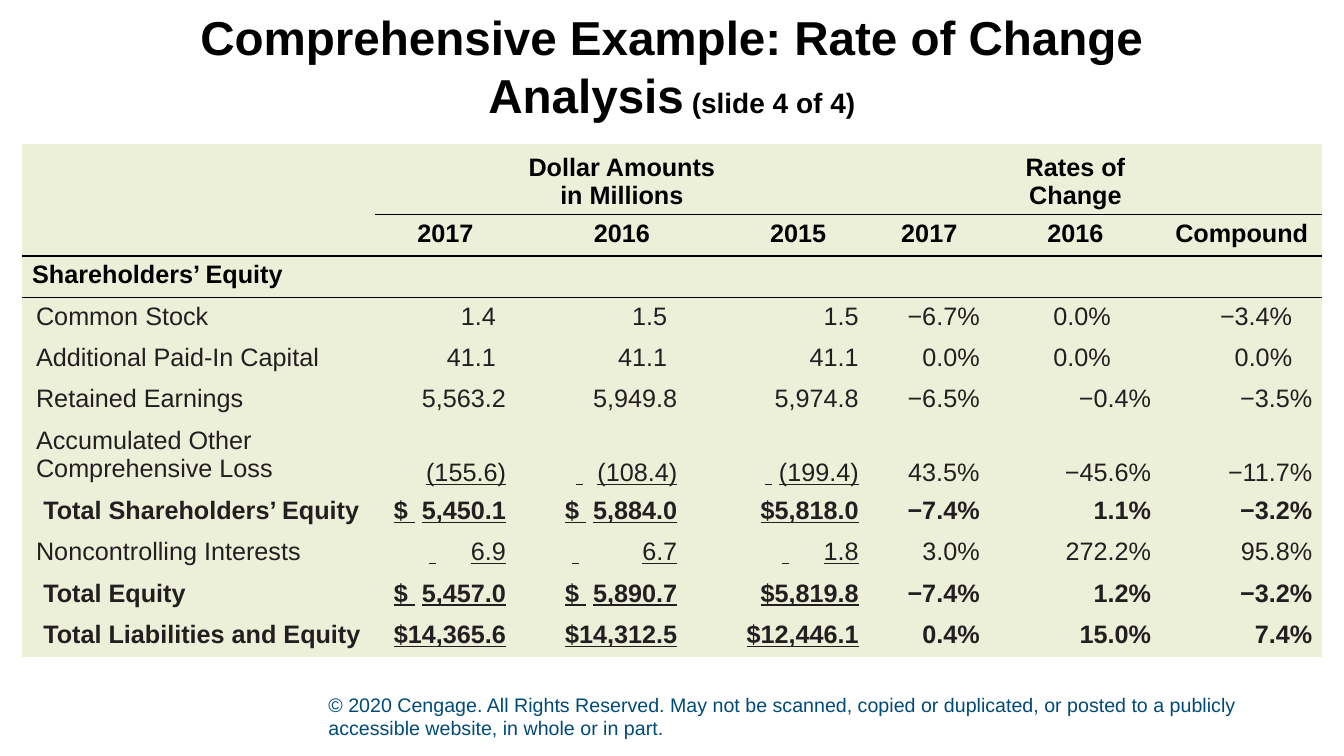
from dataclasses import dataclass

from lxml.etree import SubElement
from pptx import Presentation
from pptx.dml.color import RGBColor
from pptx.enum.text import MSO_ANCHOR as Anchor, PP_ALIGN as Align
from pptx.oxml.ns import qn
from pptx.util import Pt


@dataclass(frozen=True)
class Theme:
    font: str = "Arial"
    black: str = "000000"
    ink: str = "231F20"
    footer_blue: str = "004A78"
    table_fill: str = "EDF0D8"
    title_size: int = 34
    subtitle_size: int = 20
    table_size: int = 18
    footer_size: int = 14


NO_GRID_STYLE = "{2D5ABB26-0587-4C30-8999-92F81FD0307C}"
COLUMN_WIDTHS = [252, 100.8, 151.2, 100.8, 86.4, 122.4, 115.2]
ROW_HEIGHT = 29.5
SPACE_WIDTH = 5  # width of one space at the table type size

GROUP_HEADER = ["", "", "Dollar Amounts in Millions", "", "", "Rates of Change", ""]
YEAR_HEADER = ["", "2017", "2016", "2015", "2017", "2016", "Compound"]
SECTION = ["Shareholders’ Equity"] + [""] * 6

# Right margins of the six figure columns
WIDE_MARGINS = [14.4, 43.2, 7.2, 7.2, 36, 21.6]
PLAIN_MARGINS = [7.2, 36, 7.2, 7.2, 7.2, 7.2]

# Label and figures, right margins, widths in spaces of the underlined gaps
DETAIL_ROWS = [
    (["Common Stock", "1.4", "1.5", "1.5", "−6.7%", "0.0%", "−3.4%"], WIDE_MARGINS, None),
    (["Additional Paid-In Capital", "41.1", "41.1", "41.1", "0.0%", "0.0%", "0.0%"],
     WIDE_MARGINS, None),
    (["Retained Earnings", "5,563.2", "5,949.8", "5,974.8", "−6.5%", "−0.4%", "−3.5%"],
     PLAIN_MARGINS, None),
    (["Accumulated Other Comprehensive Loss", "(155.6)", "(108.4)", "(199.4)",
      "43.5%", "−45.6%", "−11.7%"], PLAIN_MARGINS, (0, 3, 2)),
    (["Total Shareholders’ Equity", "$5,450.1", "$5,884.0", "$5,818.0",
      "−7.4%", "1.1%", "−3.2%"], PLAIN_MARGINS, (2, 2, 0)),
    (["Noncontrolling Interests", "6.9", "6.7", "1.8", "3.0%", "272.2%", "95.8%"],
     PLAIN_MARGINS, (6, 10, 6)),
    (["Total Equity", "$5,457.0", "$5,890.7", "$5,819.8", "−7.4%", "1.2%", "−3.2%"],
     PLAIN_MARGINS, (2, 2, 0)),
    (["Total Liabilities and Equity", "$14,365.6", "$14,312.5", "$12,446.1",
      "0.4%", "15.0%", "7.4%"], PLAIN_MARGINS, (0, 0, 0)),
]


class SlideBuilder:
    def __init__(self, slide, theme):
        self.slide = slide
        self.theme = theme

    def add_run(self, paragraph, text, color, spacing=0, **formats):
        run = paragraph.add_run()
        run.text = text
        for name, value in {"name": self.theme.font, **formats}.items():
            setattr(run.font, name, value)
        run.font.color.rgb = RGBColor.from_string(color)
        if spacing:
            run.font._element.set("spc", str(spacing * 100))

    def add_text(self, left, top, width, height, anchor, align, runs):
        frame = self.slide.shapes.add_textbox(*map(Pt, (left, top, width, height))).text_frame
        frame.word_wrap = True
        frame.vertical_anchor = anchor
        paragraph = frame.paragraphs[0]
        paragraph.alignment = align
        for text, color, formats in runs:
            self.add_run(paragraph, text, color, **formats)

    def add_table(self, left, top, row_count):
        frame = self.slide.shapes.add_table(
            row_count, len(COLUMN_WIDTHS), Pt(left), Pt(top),
            Pt(sum(COLUMN_WIDTHS)), Pt(row_count * ROW_HEIGHT))
        table = frame.table
        table._tbl.tblPr.find(qn("a:tableStyleId")).text = NO_GRID_STYLE
        table.first_row = table.horz_banding = False
        for column, width in zip(table.columns, COLUMN_WIDTHS):
            column.width = Pt(width)
        for row in table.rows:
            row.height = Pt(ROW_HEIGHT)
        return table

    def add_border(self, cell, side):
        line = SubElement(cell._tc.get_or_add_tcPr(), qn(f"a:ln{side}"), w=str(Pt(1)))
        fill = SubElement(line, qn("a:solidFill"))
        SubElement(fill, qn("a:srgbClr"), val=self.theme.black)

    def fill_cell(self, cell, text, color, align, anchor=Anchor.TOP, margins=(7.2, 7.2),
                  borders="", gap=0, **formats):
        """Write one cell; gap is an underlined blank, in spaces, before the digits."""
        for side in borders:
            self.add_border(cell, side)
        cell.fill.solid()
        cell.fill.fore_color.rgb = RGBColor.from_string(self.theme.table_fill)
        cell.vertical_anchor = anchor
        cell.margin_left, cell.margin_right = map(Pt, margins)
        if not text:
            return
        paragraph = cell.text_frame.paragraphs[0]
        paragraph.alignment = align
        formats["size"] = Pt(self.theme.table_size)
        if gap:
            if text.startswith("$"):
                self.add_run(paragraph, "$", color, **formats)
                text = text[1:]
            self.add_run(paragraph, " ", color, (gap - 1) * SPACE_WIDTH, **formats)
        self.add_run(paragraph, text, color, **formats)

    def fill_header(self, table):
        for column, (group, year, section) in enumerate(
                zip(GROUP_HEADER, YEAR_HEADER, SECTION)):
            heading_borders = ("B", "TB") if column else ("", "B")
            rows = [
                (group, Align.CENTER, Anchor.BOTTOM, heading_borders[0]),
                (year, Align.CENTER, Anchor.TOP, heading_borders[1]),
                (section, Align.LEFT, Anchor.TOP, "T"),
            ]
            for row, (text, align, anchor, borders) in enumerate(rows):
                self.fill_cell(table.cell(row, column), text, self.theme.black, align,
                               anchor, borders=borders, bold=True)

    def fill_details(self, table, first_row):
        ink = self.theme.ink
        for row, (texts, margins, gaps) in enumerate(DETAIL_ROWS, first_row):
            label, *figures = texts
            is_total = label.startswith("Total")
            self.fill_cell(table.cell(row, 0), label, ink, Align.LEFT,
                           margins=(15.2 if is_total else 10, 0), bold=is_total)
            anchor = Anchor.BOTTOM if label.startswith("Accumulated") else Anchor.TOP
            for column, (figure, margin) in enumerate(zip(figures, margins), 1):
                underlined = gaps is not None and column <= len(gaps)
                self.fill_cell(table.cell(row, column), figure, ink, Align.RIGHT, anchor,
                               margins=(0, margin), gap=gaps[column - 1] if underlined else 0,
                               bold=is_total, underline=underlined)


def main():
    presentation = Presentation()
    presentation.slide_width, presentation.slide_height = Pt(960), Pt(540)
    theme = Theme()
    builder = SlideBuilder(presentation.slides.add_slide(presentation.slide_layouts[6]), theme)

    builder.add_text(227.5, 496, 693.4, 36, Anchor.BOTTOM, Align.LEFT, [
        ("© 2020 Cengage. All Rights Reserved. May not be scanned, copied or duplicated, "
         "or posted to a publicly accessible website, in whole or in part.",
         theme.footer_blue, {"size": Pt(theme.footer_size)})])
    builder.add_text(66, 10.8, 828, 72, Anchor.MIDDLE, Align.CENTER, [
        ("Comprehensive Example: Rate of Change Analysis", theme.black,
         {"size": Pt(theme.title_size), "bold": True}),
        (" (slide 4 of 4)", theme.black, {"size": Pt(theme.subtitle_size), "bold": True})])

    header_rows = 3
    table = builder.add_table(15.8, 103, header_rows + len(DETAIL_ROWS))
    builder.fill_header(table)
    builder.fill_details(table, header_rows)
    presentation.save("out.pptx")


if __name__ == "__main__":
    main()
